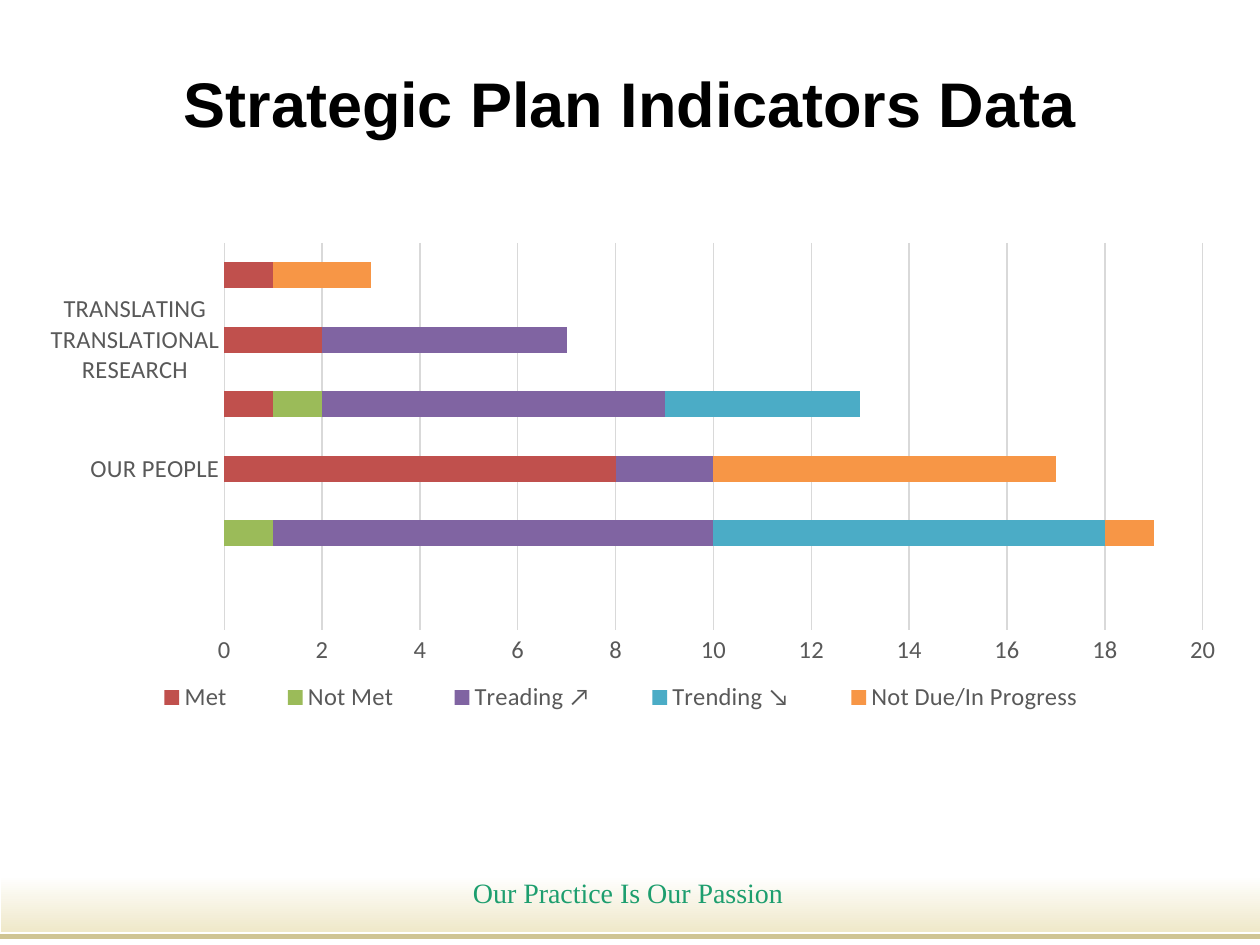
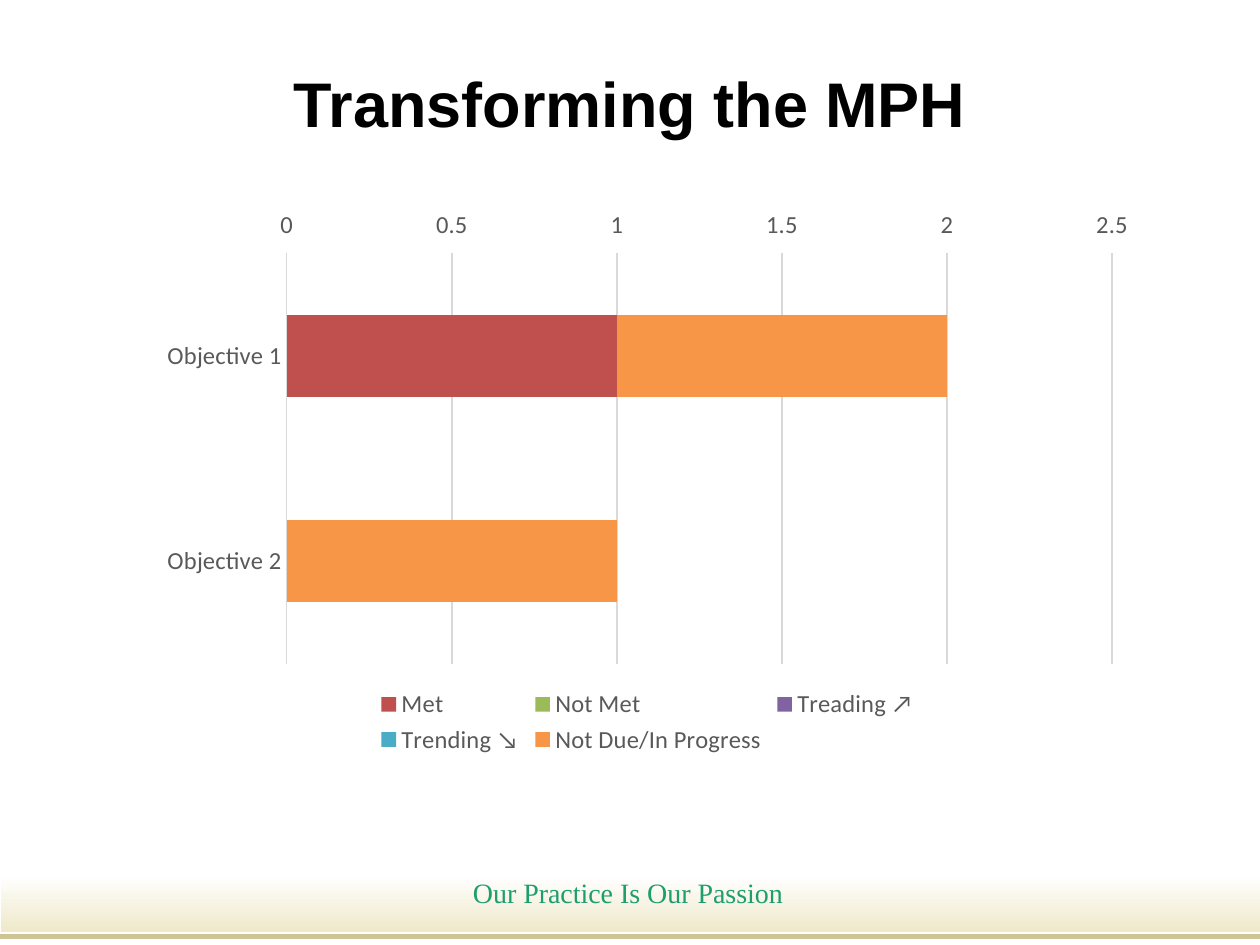
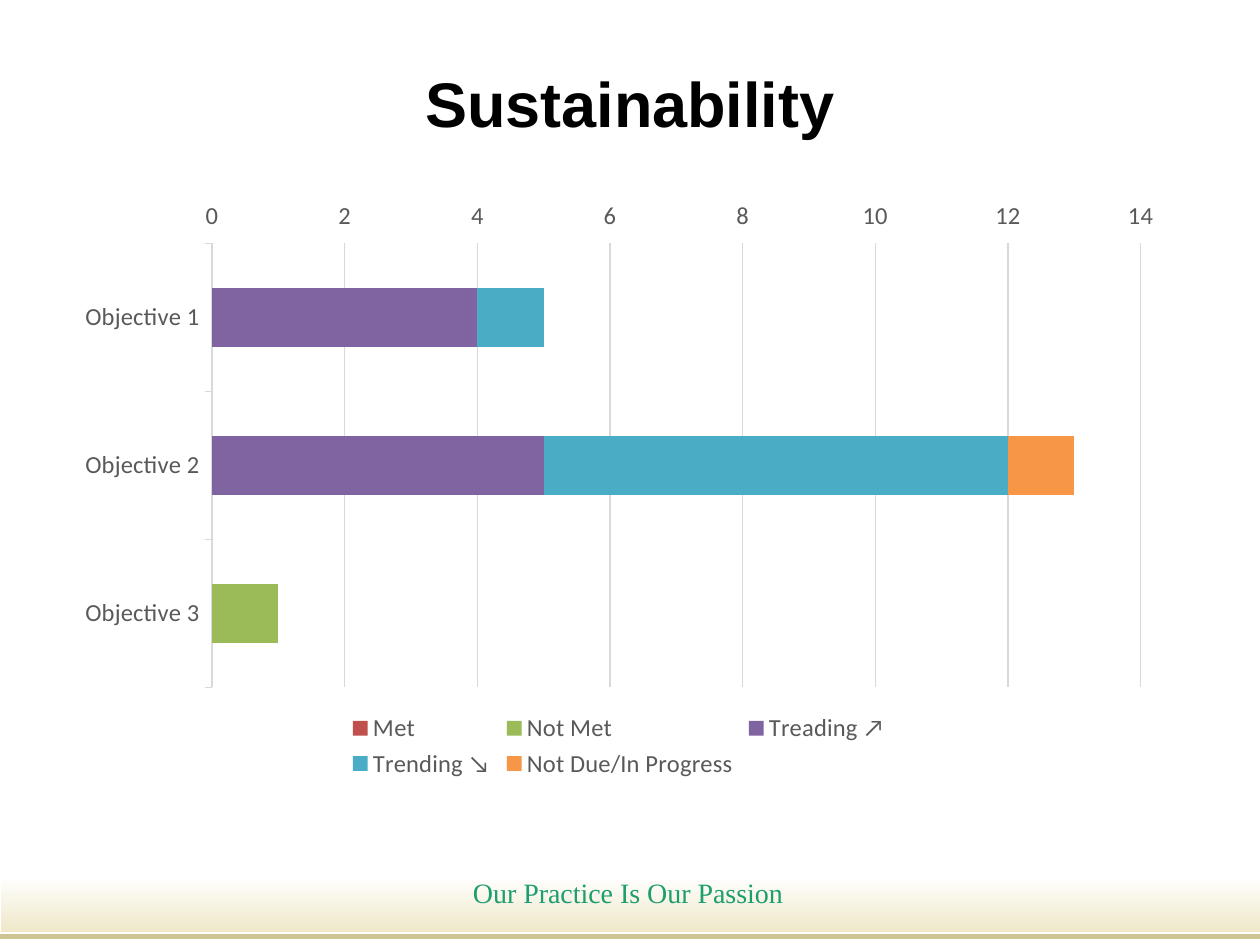
from lxml.etree import SubElement
from pptx import Presentation
from pptx.chart.data import CategoryChartData
from pptx.dml.color import RGBColor
from pptx.enum.chart import XL_CHART_TYPE, XL_LEGEND_POSITION, XL_TICK_LABEL_POSITION, XL_TICK_MARK
from pptx.enum.shapes import MSO_CONNECTOR, MSO_SHAPE
from pptx.enum.text import MSO_ANCHOR, PP_ALIGN
from pptx.oxml.ns import qn
from pptx.util import Inches, Pt

# Content: each row of values is one category, in the order of STATUSES
STATUSES = [
    ("Met", "C0504D"),
    ("Not Met", "9BBB59"),
    ("Treading ↗", "8064A2"),
    ("Trending ↘", "4BACC6"),
    ("Not Due/In Progress", "F79646"),
]
SLIDES = [
    dict(
        title="Strategic Plan Indicators Data",
        box=(0.21, 1.85, 9.63, 3.9),
        rows=[
            ("", (None, None, None, None, None)),
            ("SUSTAINABILITY ", (0, 1, 9, 8, 1)),
            ("OUR PEOPLE", (8, None, 2, None, 7)),
            ("ENHANCING SYSTEM CAPACITY", (1, 1, 7, 4, None)),
            ("TRANSLATING TRANSLATIONAL RESEARCH", (2, None, 5, None, None)),
            ("TRANSFORMING THE MPH DEGREE PROGRAM", (1, None, None, None, 2)),
        ],
        legend_box=(0.07, 0.91, 0.84, 0.07),
    ),
    dict(
        title="Transforming the MPH",
        box=(1.17, 1.58, 7.94, 4.45),
        rows=[
            ("Objective 1", (1, None, None, None, 1)),
            ("Objective 2", (None, None, None, None, 1)),
        ],
        top_down=True,
        low_labels=True,
    ),
    dict(
        title="Sustainability",
        box=(0.5, 1.5, 8.83, 4.72),
        rows=[
            ("Objective 1", (None, None, 4, 1, None)),
            ("Objective 2", (None, None, 5, 7, 1)),
            ("Objective 3", (None, 1, None, None, None)),
        ],
        top_down=True,
        ticks=XL_TICK_MARK.OUTSIDE,
    ),
]
MOTTO = "Our Practice Is Our Passion"

# Shared look
WIDTH, HEIGHT = 10, 7.5
TITLE_BOX = (0.5, 0.34, 9, 0.95)
BAND_BOX = (0.01, 6.66, 9.99, 0.74)
MOTTO_BOX = (2.56, 6.9, 4.85, 0.37)
RULE_Y = 7.43
BLACK, GREY, GRID = "000000", "595959", "D9D9D9"
WHITE, CREAM, SAND, GREEN = "FFFFFF", "EFE8C9", "CFC493", "1D9E6E"


def rgb(color):
    return RGBColor.from_string(color)


def inches(values):
    return [Inches(v) for v in values]


def set_font(font, size, color, name="Calibri", bold=False):
    font.size, font.name, font.bold = Pt(size), name, bold
    font.color.rgb = rgb(color)


def write(sp, text, **style):
    tf = sp.text_frame
    tf.word_wrap = True
    tf.vertical_anchor = MSO_ANCHOR.MIDDLE
    p = tf.paragraphs[0]
    p.alignment = PP_ALIGN.CENTER
    r = p.add_run()
    r.text = text
    set_font(r.font, **style)


def set_line(line, color, width=0.75):
    line.color.rgb = rgb(color)
    line.width = Pt(width)


def add_footer(s, layout):
    """Draw the footer and move it to the layout, where all slides show it."""
    band = s.shapes.add_shape(MSO_SHAPE.RECTANGLE, *inches(BAND_BOX))
    band.shadow.inherit = False
    band.line.fill.background()
    band.fill.gradient()
    band.fill.gradient_angle = 270
    for stop, position, color in zip(band.fill.gradient_stops, (0.39, 1), (WHITE, CREAM)):
        stop.position = position
        stop.color.rgb = rgb(color)

    rule = s.shapes.add_connector(MSO_CONNECTOR.STRAIGHT, *inches((0, RULE_Y, WIDTH, RULE_Y)))
    set_line(rule.line, SAND, 3)
    SubElement(rule.element.spPr, qn("a:effectLst"))

    motto = s.shapes.add_textbox(*inches(MOTTO_BOX))
    write(motto, MOTTO, size=16, color=GREEN, name="Times New Roman")

    for sp in (band, rule, motto):
        layout.shapes.element.append(sp.element)


def place_legend(chart, legend_box):
    """Fix the legend at left, top, width, height, as shares of the chart."""
    legend = chart.element.find(".//" + qn("c:legend"))
    for old in legend.findall(qn("c:layout")):
        legend.remove(old)
    layout = SubElement(legend, qn("c:layout"))
    legend.find(qn("c:legendPos")).addnext(layout)
    manual = SubElement(layout, qn("c:manualLayout"))
    for tag in ("xMode", "yMode"):
        SubElement(manual, qn("c:" + tag)).set("val", "edge")
    for tag, share in zip("xywh", legend_box):
        SubElement(manual, qn("c:" + tag)).set("val", str(share))


def add_status_chart(s, box, rows, top_down=False, low_labels=False,
                     ticks=XL_TICK_MARK.NONE, legend_box=None):
    data = CategoryChartData()
    data.categories = [category for category, _ in rows]
    for i, (status, _) in enumerate(STATUSES):
        data.add_series(status, [values[i] for _, values in rows])
    chart = s.shapes.add_chart(XL_CHART_TYPE.BAR_STACKED, *inches(box), data).chart
    chart.has_title = False
    set_font(chart.font, 10, BLACK)

    # Bars
    plot = chart.plots[0]
    plot.gap_width, plot.overlap = 150, 100
    plot.vary_by_categories = False
    for series, (_, color) in zip(plot.series, STATUSES):
        series.format.fill.solid()
        series.format.fill.fore_color.rgb = rgb(color)
        series.invert_if_negative = False

    # Axes
    cat_axis, val_axis = chart.category_axis, chart.value_axis
    for axis in (cat_axis, val_axis):
        set_font(axis.tick_labels.font, 14, GREY)
        axis.major_tick_mark = ticks
        axis.minor_tick_mark = XL_TICK_MARK.NONE
        axis.format.line.fill.background()
    cat_axis.reverse_order = top_down
    if top_down:
        set_line(cat_axis.format.line, GRID)
    if low_labels:
        val_axis.tick_label_position = XL_TICK_LABEL_POSITION.LOW
    val_axis.has_major_gridlines = True
    set_line(val_axis.major_gridlines.format.line, GRID)

    # Legend
    chart.has_legend = True
    chart.legend.position = XL_LEGEND_POSITION.BOTTOM
    chart.legend.include_in_layout = False
    set_font(chart.legend.font, 14, GREY)
    if legend_box:
        place_legend(chart, legend_box)


def main():
    prs = Presentation()
    prs.slide_width, prs.slide_height = inches((WIDTH, HEIGHT))
    layout = prs.slide_layouts.get_by_name("Title Only")
    for ph in list(layout.placeholders)[1:]:
        ph.element.getparent().remove(ph.element)

    for number, content in enumerate(SLIDES):
        s = prs.slides.add_slide(layout)
        if number == 0:
            add_footer(s, layout)
        title = s.shapes.title
        title.left, title.top, title.width, title.height = inches(TITLE_BOX)
        write(title, content["title"], size=36, color=BLACK, name="Arial", bold=True)
        add_status_chart(s, **{k: v for k, v in content.items() if k != "title"})

    prs.save("out.pptx")


if __name__ == "__main__":
    main()
